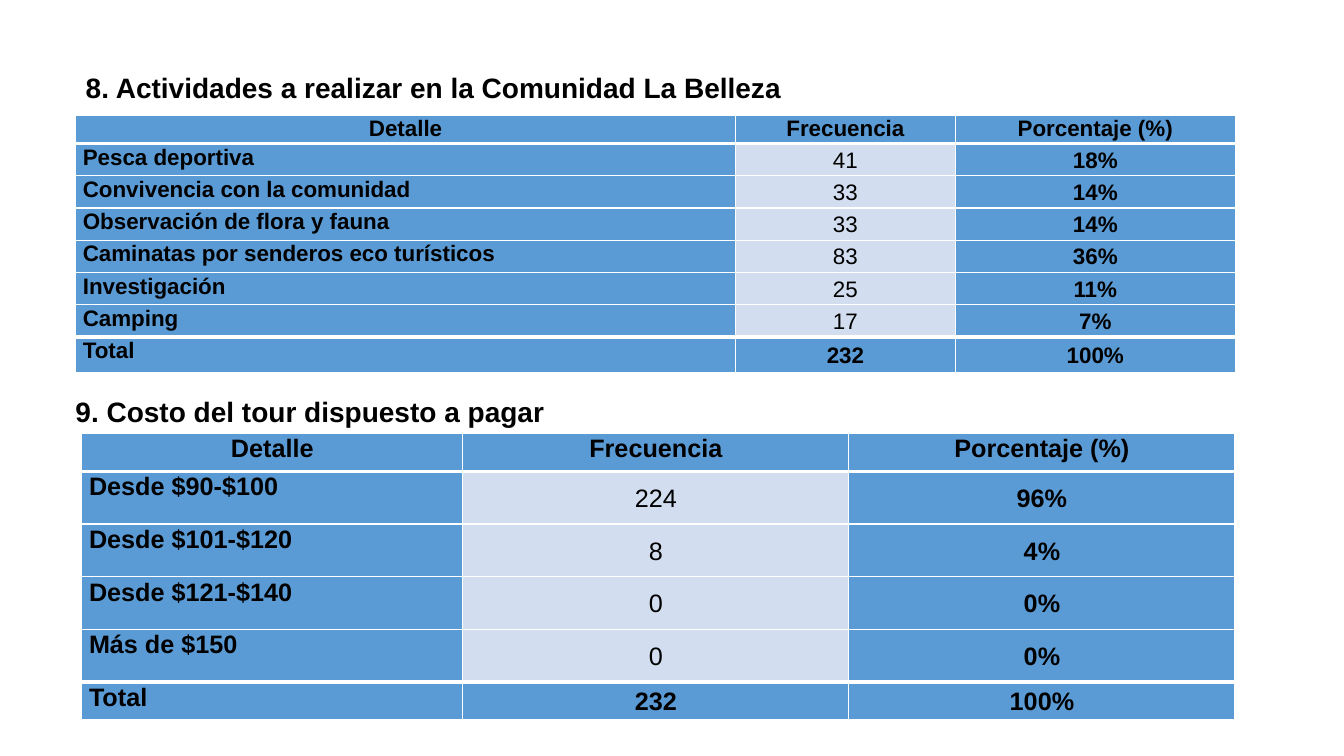
"""Build the slide with the survey tables on activities and tour cost."""
from dataclasses import dataclass

from lxml.etree import SubElement as Sub
from pptx import Presentation
from pptx.dml.color import RGBColor as Color
from pptx.enum.text import MSO_ANCHOR as Anchor, MSO_AUTO_SIZE as Fit, PP_ALIGN as Align
from pptx.oxml import parse_xml
from pptx.oxml.ns import nsdecls, qn
from pptx.util import Pt


@dataclass(frozen=True)
class Theme:
    face: str = "Arial"
    ink: str = "000000"
    blue: str = "5B9BD5"
    pale: str = "D2DEEF"
    rule: str = "FFFFFF"
    head: float = 20
    thin: float = 1
    thick: float = 3


@dataclass(frozen=True)
class Title:
    text: str
    left: float
    top: float
    width: float
    height: float = 33.1


@dataclass(frozen=True)
class Grid:
    left: float
    top: float
    cols: tuple[float, ...]
    first: float
    mid: float
    last: float
    size: float
    body: tuple[tuple[str, str, str], ...]


THEME = Theme()
HEADER = ("Detalle", "Frecuencia", "Porcentaje (%)")
TITLES = (
    Title("8. Actividades a realizar en la Comunidad La Belleza", 54, 45.4, 514.8),
    Title("9. Costo del tour dispuesto a pagar", 46.8, 276.5, 352.1),
)
GRIDS = (
    Grid(54, 82.1, (471.4, 157, 200), 20.2, 23.05, 25.2, 16, (
        ("Pesca deportiva", "41", "18%"),
        ("Convivencia con la comunidad", "33", "14%"),
        ("Observación de flora y fauna", "33", "14%"),
        ("Caminatas por senderos eco turísticos", "83", "36%"),
        ("Investigación", "25", "11%"),
        ("Camping", "17", "7%"),
        ("Total", "232", "100%"),
    )),
    Grid(58.4, 309.6, (272.2, 275.8, 275.8), 27.1, 37.6, 27.1, 18, (
        ("Desde $90-$100", "224", "96%"),
        ("Desde $101-$120", "8", "4%"),
        ("Desde $121-$140", "0", "0%"),
        ("Más de $150", "0", "0%"),
        ("Total", "232", "100%"),
    )),
)


def write(frame, text: str, size: float, bold: bool, align, space: float, after: float) -> None:
    """Put one formatted paragraph into a text frame."""
    para = frame.paragraphs[0]
    para.text = text
    para.alignment = align
    para.line_spacing = space
    para.space_before, para.space_after = Pt(0), Pt(after)
    font = para.font
    font.name, font.size, font.bold = THEME.face, Pt(size), bold
    font.color.rgb = Color.from_string(THEME.ink)


def draw_title(shape, title: Title) -> None:
    """Place and format a heading."""
    shape.left, shape.top = Pt(title.left), Pt(title.top)
    shape.width, shape.height = Pt(title.width), Pt(title.height)
    frame = shape.text_frame
    frame.word_wrap = False
    frame.auto_size = Fit.SHAPE_TO_FIT_TEXT
    frame.vertical_anchor = Anchor.TOP
    write(frame, title.text, THEME.head, True, Align.LEFT, 1.07, 8)


def draw_edges(cell, top: float, bottom: float) -> None:
    """Draw the four borders of a cell."""
    props = cell._tc.get_or_add_tcPr()
    sides = {"lnL": THEME.thin, "lnR": THEME.thin, "lnT": top, "lnB": bottom}
    for spot, (tag, width) in enumerate(sides.items()):
        line = parse_xml(f'<a:{tag} {nsdecls("a")} w="{Pt(width)}"/>')
        fill = Sub(line, qn("a:solidFill"))
        Sub(fill, qn("a:srgbClr")).set("val", THEME.rule)
        props.insert(spot, line)


def draw_grid(slide, grid: Grid) -> None:
    """Draw a table with header, body and total rows."""
    data = (HEADER, *grid.body)
    end = len(data) - 1
    highs = (grid.first, *[grid.mid] * (end - 1), grid.last)
    table = slide.shapes.add_table(
        len(data), len(grid.cols), Pt(grid.left), Pt(grid.top),
        Pt(sum(grid.cols)), Pt(sum(highs)),
    ).table
    table.horz_banding = False
    for col, width in zip(table.columns, grid.cols):
        col.width = Pt(width)
    for row, high in zip(table.rows, highs):
        row.height = Pt(high)
    for y, row in enumerate(data):
        for x, text in enumerate(row):
            cell = table.cell(y, x)
            plain = x == 1 and 0 < y < end
            label = y == 0 or x == 0
            cell.margin_left = cell.margin_right = Pt(5.2)
            cell.margin_top = cell.margin_bottom = Pt(0)
            cell.vertical_anchor = Anchor.TOP if label else Anchor.MIDDLE
            cell.fill.solid()
            cell.fill.fore_color.rgb = Color.from_string(THEME.pale if plain else THEME.blue)
            align = Align.LEFT if x == 0 and y else Align.CENTER
            space, after = (1.06, 8) if label else (1.07, 0)
            write(cell.text_frame, text, grid.size, not plain, align, space, after)
            draw_edges(cell, THEME.thick if y in (1, end) else THEME.thin,
                       THEME.thick if y in (0, end - 1) else THEME.thin)


def main() -> None:
    """Build and save the deck."""
    deck = Presentation()
    deck.slide_width, deck.slide_height = Pt(960), Pt(540)
    slide = deck.slides.add_slide(deck.slide_layouts[5])
    box = slide.shapes.add_textbox(Pt(0), Pt(0), Pt(0), Pt(0))
    for shape, title in zip((slide.shapes.title, box), TITLES):
        draw_title(shape, title)
    for grid in GRIDS:
        draw_grid(slide, grid)
    deck.save("out.pptx")


if __name__ == "__main__":
    main()
